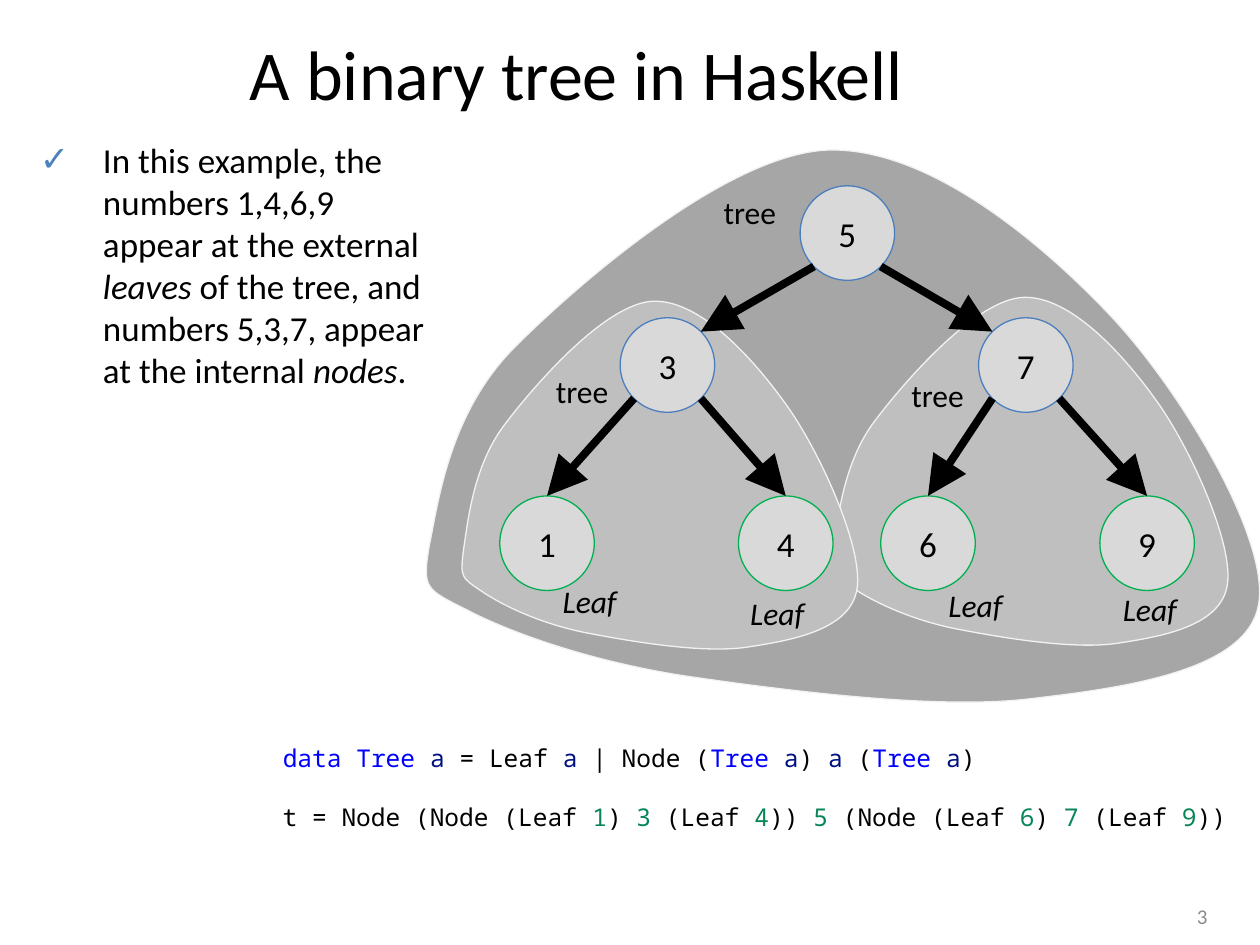
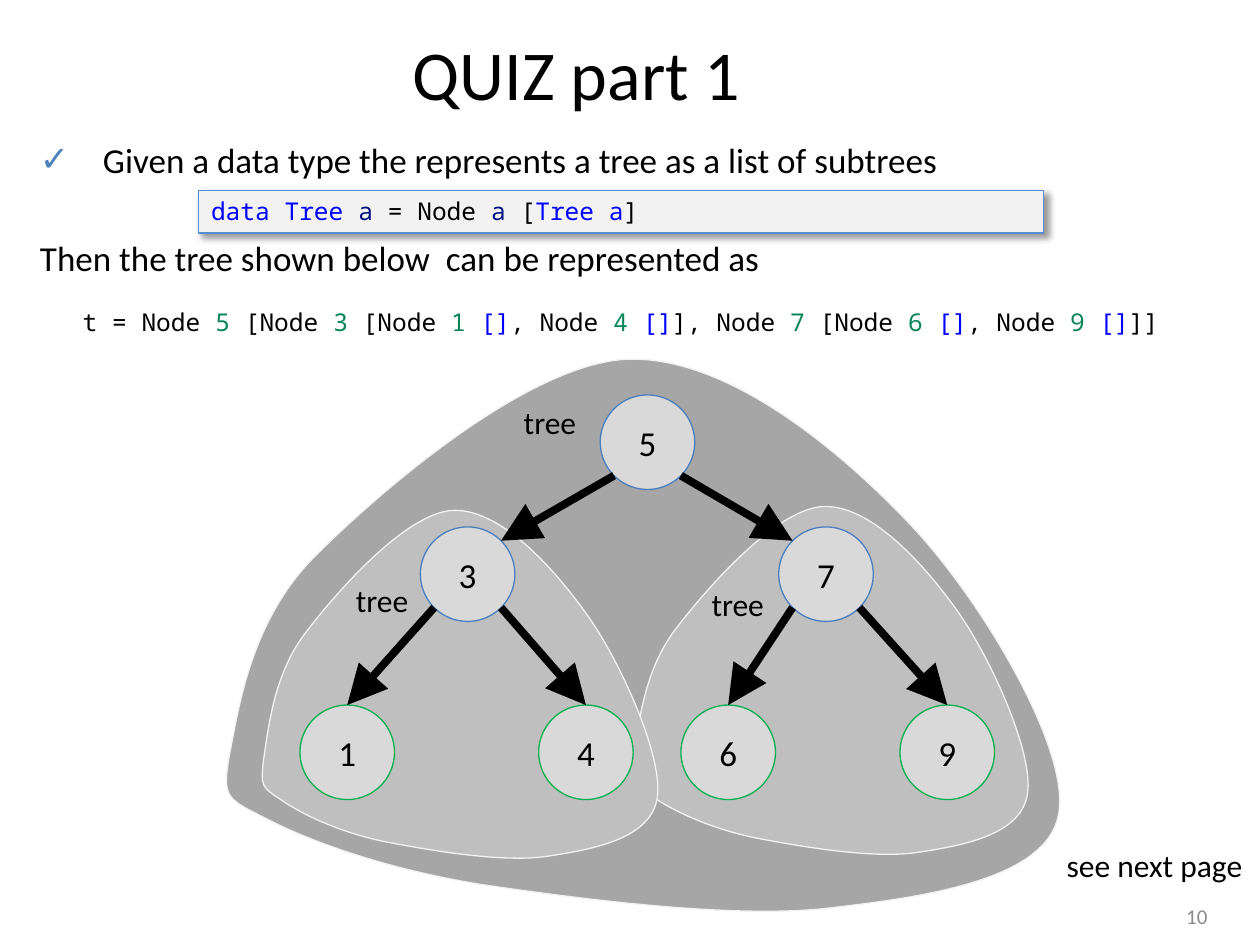
from lxml import etree
from pptx import Presentation
from pptx import util as u
from pptx.dml import color
from pptx.enum import shapes, text
from pptx.oxml import ns, parse_xml

Pt = u.Pt
COLORS = {
    "black": "000000", "white": "FFFFFF", "number": "8C8C8C", "bullet": "4F81BD",
    "outer": "A6A6A6", "inner": "BFBFBF", "edge": "F2F2F2", "node": "D9D9D9",
    "branch": "4B7EBC", "leaf": "00B050", "panel": "F2F2F2", "panel edge": "558ED5",
    "keyword": "0000FF", "variable": "001080", "literal": "098658",
}
BODY = {"name": "Calibri", "size": Pt(20)}
TITLE = {"name": "Calibri", "size": Pt(40)}
LABEL = {"name": "Calibri", "size": Pt(18)}
NUMBER = {"name": "Calibri", "size": Pt(12)}
CODE = {"name": "Noto Sans Mono", "size": Pt(14)}
MARKS = {"k": "keyword", "v": "variable", "n": "literal", "i": "black"}

LEFT, CENTER, RIGHT = text.PP_ALIGN.LEFT, text.PP_ALIGN.CENTER, text.PP_ALIGN.RIGHT
TOP, MIDDLE = text.MSO_ANCHOR.TOP, text.MSO_ANCHOR.MIDDLE

RADIUS = 27
CORNER = 19.1
TREE_SIZE = (476, 315.4)
SUBTREE_SIZE = (226, 198.7)
SUBTREES = [(231.8, 84.2), (20.2, 86.4)]
NODES = {
    "5": (240.2, 47.4), "3": (137.4, 122.8), "7": (342.2, 122.8),
    "1": (68.6, 224.6), "4": (205, 224.6), "6": (286.3, 224.6), "9": (411.5, 224.6),
}
CHILDREN = {"5": "37", "3": "14", "7": "69"}
TREE_LABELS = [(162.4, 21.2), (66.5, 123), (269.7, 125.3)]
LEAF_LABELS = [(70.4, 243.4), (177.6, 250.2), (290.9, 245.5), (390.5, 248)]
OUTLINE_SCALE = 1000
OUTLINE_START = (3, 715)
OUTLINE_CURVES = [
    ((14, 635), (27, 475), (106, 356)),
    ((185, 237), (359, 11), (478, 0)),
    ((598, -9), (734, 162), (820, 299)),
    ((906, 436), (1014, 710), (998, 826)),
    ((983, 941), (844, 973), (729, 993)),
    ((614, 1016), (421, 977), (307, 952)),
    ((194, 925), (100, 874), (48, 833)),
    ((-2, 795), (-6, 795), OUTLINE_START),
]


def rgb(name):
    return color.RGBColor.from_string(COLORS[name])


def apply_format(target, values):
    for name, value in values.items():
        setattr(target, name, value)


def place(shape, box):
    apply_format(shape, dict(zip(("left", "top", "width", "height"), map(Pt, box))))


def split_marks(marked):
    plain, *pieces = marked.split("{")
    yield "black", False, plain
    for piece in pieces:
        styled, rest = piece.split("}")
        mark, words = styled.split(":", 1)
        yield MARKS[mark], mark == "i", words
        yield "black", False, rest


def write(paragraph, marked, font, tint=None, align=LEFT):
    paragraph.alignment = align
    for name, italic, words in split_marks(marked):
        if words:
            run = paragraph.add_run()
            run.text = words
            apply_format(run.font, {**font, "italic": italic})
            run.font.color.rgb = rgb(tint or name)


def fill_frame(shape, marked, font, tint=None, align=LEFT, anchor=TOP, wrap=True):
    frame = shape.text_frame
    apply_format(frame, {"word_wrap": wrap, "vertical_anchor": anchor})
    write(frame.paragraphs[0], marked, font, tint, align)
    return frame


def add_text(slide, box, marked, font, **options):
    shape = slide.shapes.add_textbox(*map(Pt, box))
    return fill_frame(shape, marked, font, **options)


def paint(shape, fill, line=None):
    shape.shadow.inherit = False
    shape.fill.solid()
    shape.fill.fore_color.rgb = rgb(fill)
    if line:
        shape.line.color.rgb = rgb(line)
        shape.line.width = Pt(0.75)
    else:
        shape.line.fill.background()


def add_shape(slide, kind, box, fill, line=None):
    shape = slide.shapes.add_shape(kind, *map(Pt, box))
    paint(shape, fill, line)
    return shape


def add_bullet(paragraph):
    properties = paragraph._p.get_or_add_pPr()
    properties.set("marL", str(Pt(36)))
    properties.set("indent", str(Pt(-36)))
    tint = etree.SubElement(properties, ns.qn("a:buClr"))
    etree.SubElement(tint, ns.qn("a:srgbClr"), val=COLORS["bullet"])
    etree.SubElement(properties, ns.qn("a:buFont"), typeface=BODY["name"])
    etree.SubElement(properties, ns.qn("a:buChar"), char="✓")


def add_body(slide, box, marked):
    frame = add_text(slide, box, "", BODY)
    add_bullet(frame.paragraphs[0])
    write(frame.paragraphs[0], marked, BODY)
    return frame


def add_blob(slide, box, fill):
    builder = slide.shapes.build_freeform(*OUTLINE_START)
    builder.add_line_segments([curve[-1] for curve in OUTLINE_CURVES], close=True)
    blob = builder.convert_to_shape()
    outline = blob._element.spPr.find(".//" + ns.qn("a:path"))
    for side in "wh":
        outline.set(side, str(OUTLINE_SCALE))
    start, *segments, close = outline
    for segment in segments:
        outline.remove(segment)
    apply_format(start[0], dict(zip("xy", OUTLINE_START)))
    for curve in OUTLINE_CURVES:
        bend = etree.Element(ns.qn("a:cubicBezTo"))
        for x, y in curve:
            etree.SubElement(bend, ns.qn("a:pt"), x=str(x), y=str(y))
        close.addprevious(bend)
    place(blob, box)
    paint(blob, fill, "edge")


def add_arrow(slide, start, end):
    connector = slide.shapes.add_connector(
        shapes.MSO_CONNECTOR.STRAIGHT, *map(Pt, (*start, *end)))
    connector.line.color.rgb = rgb("black")
    connector.line.width = Pt(4.5)
    etree.SubElement(connector.line._get_or_add_ln(), ns.qn("a:tailEnd"),
                     type="triangle", w="lg", len="lg")
    etree.SubElement(connector._element.spPr, ns.qn("a:effectLst"))


def add_tree(slide, left, top, leaf_labels=()):
    def shift(point):
        return left + point[0], top + point[1]

    add_blob(slide, (left, top, *TREE_SIZE), "outer")
    for corner in SUBTREES:
        add_blob(slide, (*shift(corner), *SUBTREE_SIZE), "inner")
    for value, center in NODES.items():
        x, y = shift(center)
        circle = add_shape(slide, shapes.MSO_SHAPE.OVAL,
                           (x - RADIUS, y - RADIUS, 2 * RADIUS, 2 * RADIUS),
                           "node", "branch" if value in CHILDREN else "leaf")
        fill_frame(circle, value, BODY, align=CENTER, anchor=MIDDLE)
    for parent, children in CHILDREN.items():
        x, y = shift(NODES[parent])
        for child, side in zip(children, (-1, 1)):
            child_x, child_y = shift(NODES[child])
            if child in CHILDREN:
                end = (child_x - side * CORNER, child_y - CORNER)
            else:
                end = (child_x, child_y - RADIUS)
            add_arrow(slide, (x + side * CORNER, y + CORNER), end)
    for corners, marked, width in ((TREE_LABELS, "tree", 44.6), (leaf_labels, "{i:Leaf}", 46)):
        for corner in corners:
            add_text(slide, (*shift(corner), width, 29), marked, LABEL, wrap=False)


def add_code_panel(slide, box, marked):
    panel = add_shape(slide, shapes.MSO_SHAPE.RECTANGLE, box, "panel", "panel edge")
    fill_frame(panel, marked, CODE)
    effects = panel._element.spPr.find(ns.qn("a:effectLst"))
    effects.append(parse_xml(
        f'<a:outerShdw {ns.nsdecls("a")} blurRad="{Pt(4)}" dist="{Pt(3)}" dir="2700000" '
        f'algn="tl" rotWithShape="0"><a:srgbClr val="{COLORS["black"]}">'
        '<a:alpha val="40000"/></a:srgbClr></a:outerShdw>'))


def start_slide(presentation, title, number):
    slide = presentation.slides.add_slide(presentation.slide_layouts[5])
    place(slide.shapes.title, (16, 19.5, 627, 44))
    fill_frame(slide.shapes.title, title, TITLE, align=CENTER, anchor=MIDDLE)
    add_text(slide, (529, 508.7, 168, 29), number, NUMBER,
             tint="number", align=RIGHT, anchor=MIDDLE)
    return slide


def add_tree_slide(presentation):
    slide = start_slide(presentation, "A binary tree in Haskell", "3")
    add_tree(slide, 244, 85.8, LEAF_LABELS)
    add_body(slide, (15.8, 75.6, 241, 414),
             "In this example, the numbers 1,4,6,9 appear at the external {i:leaves} of the tree, "
             "and numbers 5,3,7, appear at the internal {i:nodes}.")
    add_text(slide, (154.5, 421.2, 425, 24.5),
             "{k:data Tree }{v:a} = Leaf {v:a} | Node ({k:Tree }{v:a}) {v:a} ({k:Tree }{v:a})", CODE)
    add_text(slide, (154.5, 454.5, 557, 24.5),
             "t = Node (Node (Leaf {n:1}) {n:3} (Leaf {n:4})) {n:5} "
             "(Node (Leaf {n:6}) {n:7} (Leaf {n:9}))", CODE)


def add_quiz_slide(presentation):
    slide = start_slide(presentation, "QUIZ part 1", "10")
    frame = add_body(slide, (15.8, 75.6, 681, 414),
                     "Given a data type the represents a tree as a list of subtrees")
    conclusion = frame.add_paragraph()
    conclusion.space_before = Pt(32)
    write(conclusion, "Then the tree shown below  can be represented as", BODY)
    add_tree(slide, 129.8, 205.3)
    add_code_panel(slide, (113.5, 108.7, 483, 24.5),
                   "{k:data Tree }{v:a} = Node {v:a} [{k:Tree a}]")
    add_text(slide, (40.2, 171.8, 664, 24.5),
             "t = Node {n:5} [Node {n:3} [Node {n:1 }{k:[]}, Node {n:4 }{k:[]}], "
             "Node {n:7} [Node {n:6 }{k:[]}, Node {n:9 }{k:[]}]]", CODE)
    note = add_shape(slide, shapes.MSO_SHAPE.RECTANGLE, (602.4, 479.9, 117.6, 29), "white")
    fill_frame(note, "see next page", LABEL)


def main():
    presentation = Presentation()
    apply_format(presentation, {"slide_width": Pt(720), "slide_height": Pt(540)})
    add_tree_slide(presentation)
    add_quiz_slide(presentation)
    presentation.save("out.pptx")


if __name__ == "__main__":
    main()
